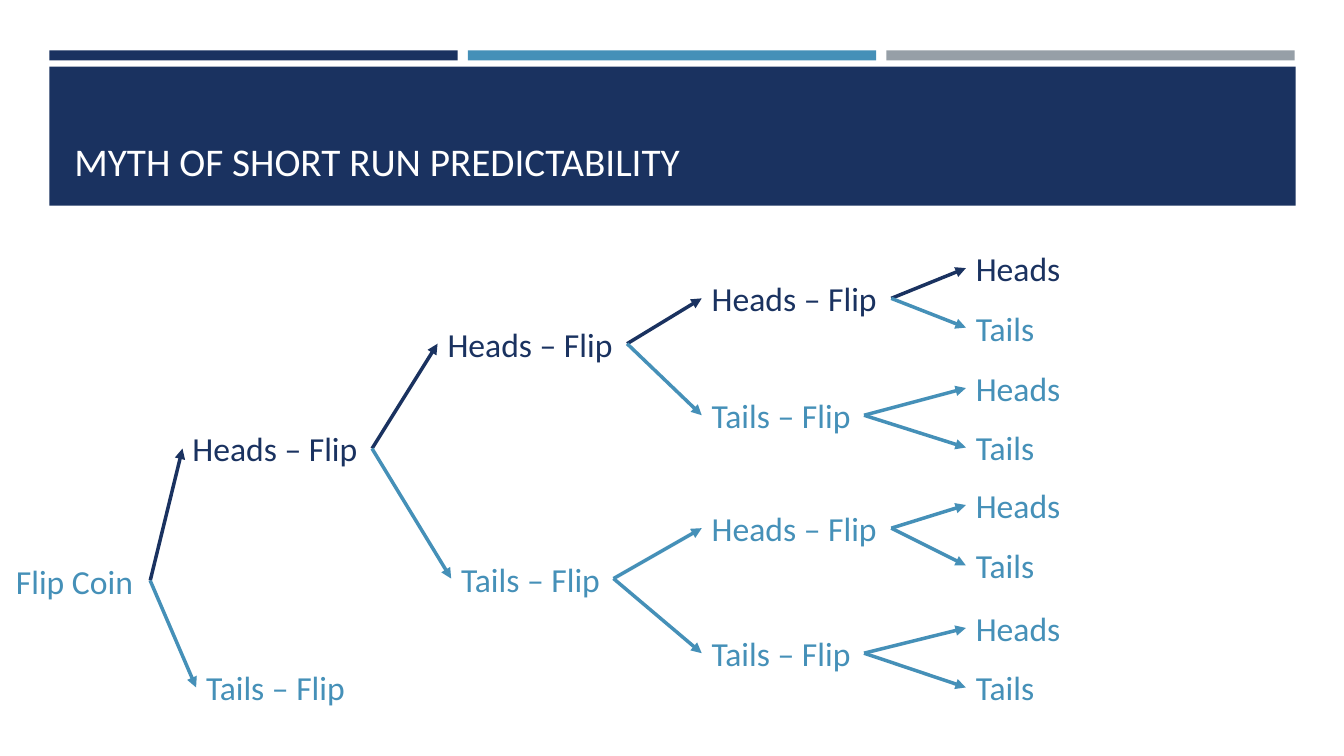
from lxml import etree
from pptx import Presentation
from pptx.dml.color import RGBColor
from pptx.enum.shapes import MSO_CONNECTOR, MSO_SHAPE
from pptx.enum.text import MSO_ANCHOR, MSO_AUTO_SIZE
from pptx.oxml.ns import qn
from pptx.util import Inches, Pt

RECT = MSO_SHAPE.RECTANGLE
LINE = MSO_CONNECTOR.STRAIGHT
BOTTOM = MSO_ANCHOR.BOTTOM
MIDDLE = MSO_ANCHOR.MIDDLE
GROW = MSO_AUTO_SIZE.SHAPE_TO_FIT_TEXT
NO_FIT = MSO_AUTO_SIZE.NONE

NAVY = RGBColor(0x1A, 0x32, 0x60)
BLUE = RGBColor(0x45, 0x90, 0xB8)
GRAY = RGBColor(0x96, 0x9F, 0xA7)
WHITE = RGBColor(0xFF, 0xFF, 0xFF)

FONT = "Calibri"
EDGE, BAND = 0.49, 12.36
BAR, GAP = 4.05, 0.1
TALL = 0.5
LEFT, RIGHT = 1, 3
WIDTHS = {"Flip Coin": 1.43, "Heads – Flip": 1.88, "Tails – Flip": 1.61,
          "Heads": 1.05, "Tails": 0.78}

# Each level: left edge of its column, and whether narrow labels are centred in it
COLS = [(0.06, False), (1.81, True), (4.34, True), (6.96, False), (9.58, False)]

# Each node: (middle height, children); the first child is heads, the second tails
TREE = (5.76, [
    (4.45, [
        (3.41, [
            (2.96, [(2.66, []), (3.25, [])]),
            (4.12, [(3.85, []), (4.44, [])]),
        ]),
        (5.74, [
            (5.24, [(5.01, []), (5.61, [])]),
            (6.48, [(6.23, []), (6.82, [])]),
        ]),
    ]),
    (6.82, []),
])


def add_bar(slide, left, top, width, height, color):
    bar = slide.shapes.add_shape(RECT, Inches(left), Inches(top),
                                 Inches(width), Inches(height))
    bar.shadow.inherit = False
    bar.fill.solid()
    bar.fill.fore_color.rgb = color
    bar.line.fill.background()


def add_text(slide, text, area, size, color, anchor, wrap, fit):
    box = slide.shapes.add_textbox(*(Inches(n) for n in area))
    frame = box.text_frame
    frame.word_wrap = wrap
    frame.auto_size = fit
    frame.vertical_anchor = anchor
    run = frame.paragraphs[0].add_run()
    run.text = text
    run.font.name = FONT
    run.font.size = Pt(size)
    run.font.color.rgb = color
    return box


def add_arrow(slide, start, end, color):
    arrow = slide.shapes.add_connector(LINE, 0, 0, 0, 0)
    arrow.begin_connect(start, RIGHT)
    arrow.end_connect(end, LEFT)
    arrow.line.color.rgb = color
    arrow.line.width = Pt(2.5)
    line = arrow.line._get_or_add_ln()
    etree.SubElement(line, qn("a:tailEnd"), type="triangle")
    etree.SubElement(arrow._element.spPr, qn("a:effectLst"))


def add_node(slide, node, text, level=0, streak=True):
    """Draw a node and its branches; streak means only heads so far."""
    mid, kids = node
    left, center = COLS[level]
    width = WIDTHS[text]
    if center:
        left += (WIDTHS["Heads – Flip"] - width) / 2
    color = NAVY if streak and level else BLUE
    box = add_text(slide, text, (left, mid - TALL / 2, width, TALL),
                   24, color, MIDDLE, False, GROW)
    last = level + 2 == len(COLS)
    for face, kid in zip(("Heads", "Tails"), kids):
        label = face if last else f"{face} – Flip"
        lucky = streak and face == "Heads"
        end = add_node(slide, kid, label, level + 1, lucky)
        add_arrow(slide, box, end, NAVY if lucky else BLUE)
    return box


def add_head(slide):
    for i, color in enumerate((NAVY, BLUE, GRAY)):
        add_bar(slide, EDGE + i * (BAR + GAP), 0.5, BAR, 0.1, color)
    add_bar(slide, EDGE, 0.66, BAND, 1.38, NAVY)
    add_text(slide, "MYTH OF SHORT RUN PREDICTABILITY",
             (0.64, 0.77, 12.06, 1.11), 28, WHITE, BOTTOM, True, NO_FIT)


def main():
    deck = Presentation()
    deck.slide_width = Inches(13.33)
    deck.slide_height = Inches(7.5)
    slide = deck.slides.add_slide(deck.slide_layouts[6])
    add_head(slide)
    add_node(slide, TREE, "Flip Coin")
    deck.save("out.pptx")


if __name__ == "__main__":
    main()
